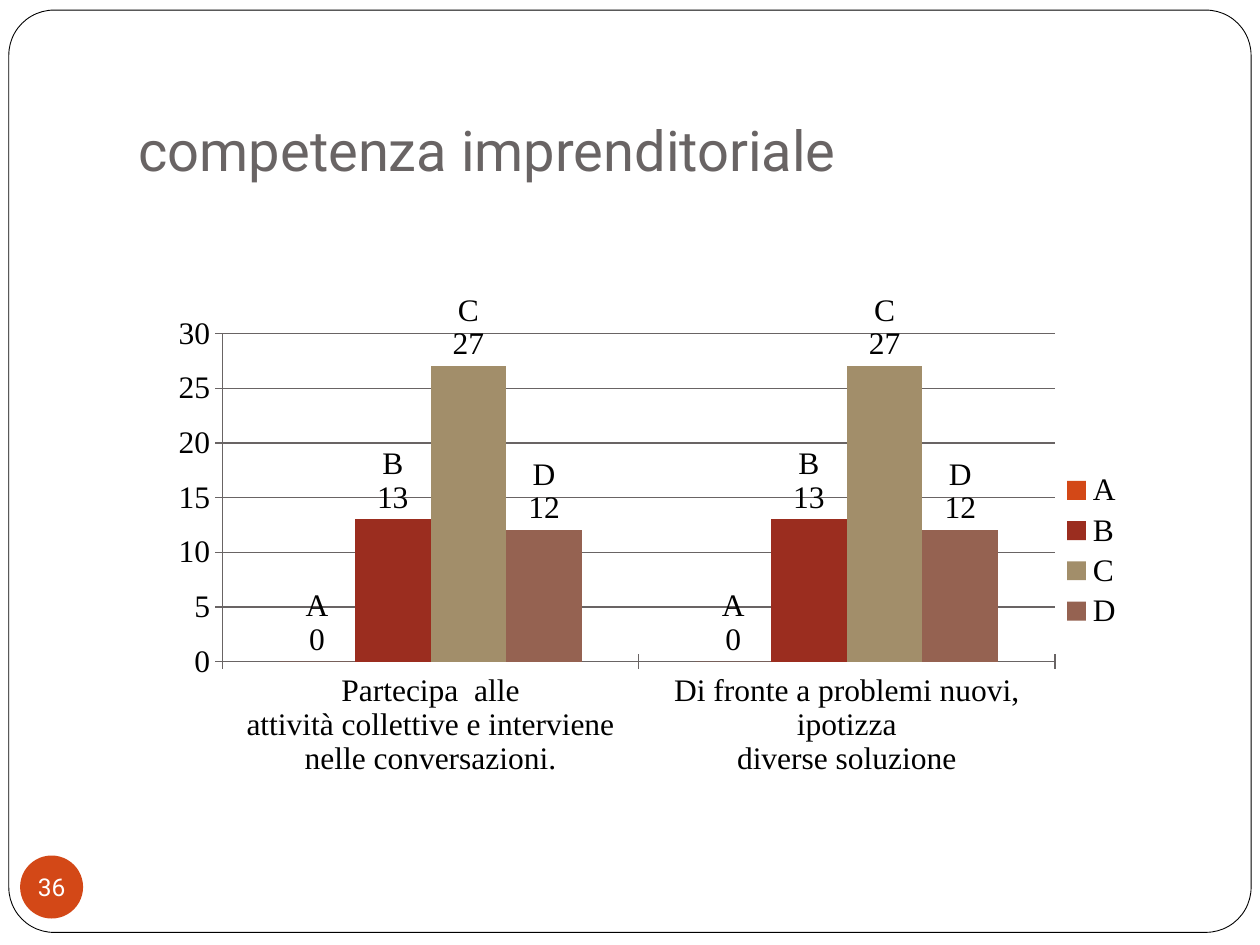
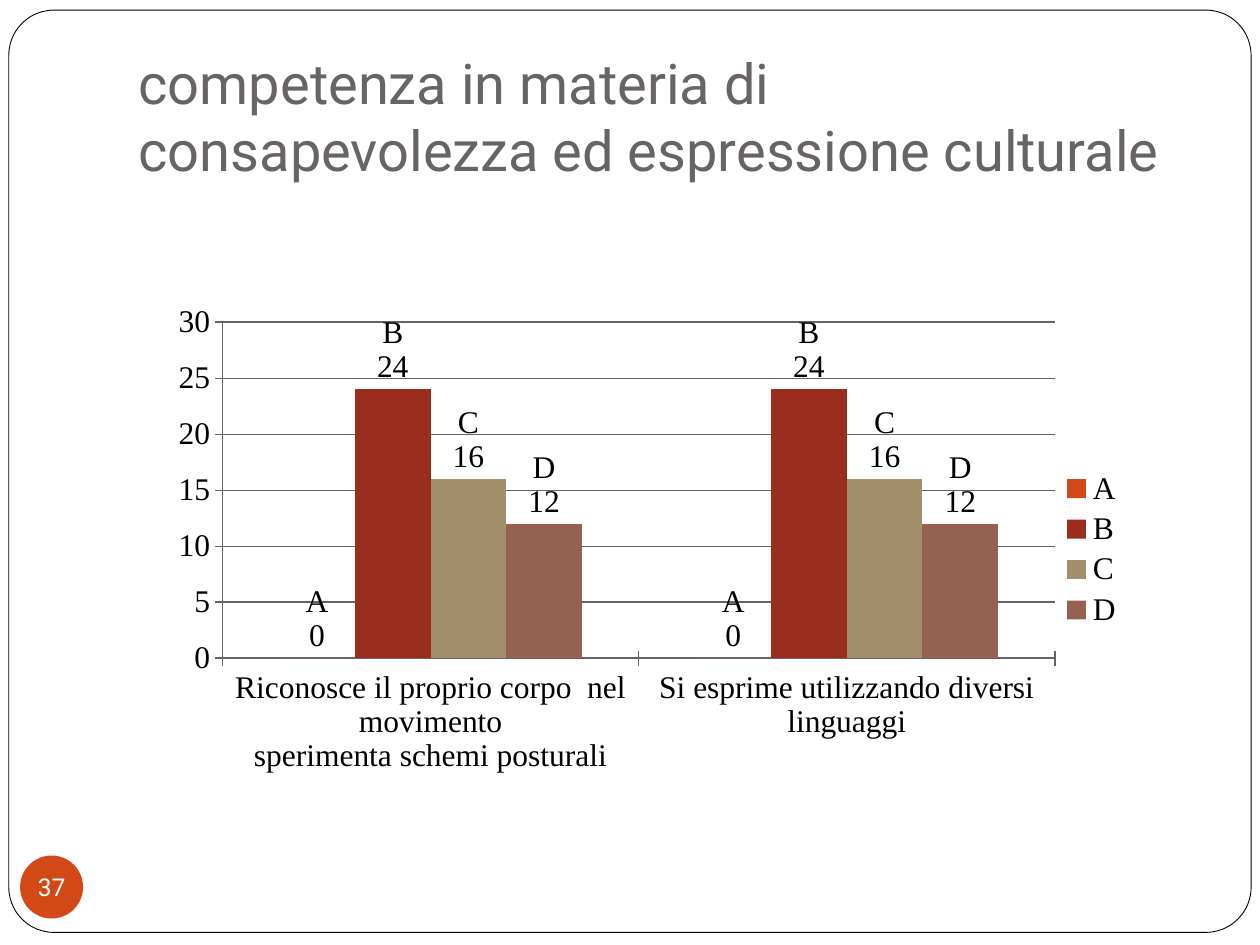
import pptx
import pptx.chart.data
import pptx.dml.color
import pptx.enum.chart
import pptx.enum.shapes
import pptx.enum.text
import pptx.util
import lxml.etree
from pptx.dml.color import RGBColor
from pptx.util import Inches, Pt

WHITE = RGBColor(0xFF, 0xFF, 0xFF)
BLACK = RGBColor(0x00, 0x00, 0x00)
GRAY = RGBColor(0x69, 0x64, 0x64)
ORANGE = RGBColor(0xD3, 0x48, 0x17)
LEVEL_COLORS = {
    "A": ORANGE,
    "B": RGBColor(0x9B, 0x2D, 0x1F),
    "C": RGBColor(0xA2, 0x8E, 0x6A),
    "D": RGBColor(0x95, 0x62, 0x51),
}
TITLE_FONT = "Roboto"
CHART_FONT = "Times New Roman"

FIRST_NUMBER = 36
competences = [
    {
        "title": "competenza imprenditoriale",
        "criteria": [
            "Partecipa  alle\nattività collettive e interviene nelle conversazioni.",
            "Di fronte a problemi nuovi, ipotizza\ndiverse soluzione",
        ],
        "pupils": {"A": [0, 0], "B": [13, 13], "C": [27, 27], "D": [12, 12]},
        "plot": {"x": 0.07, "y": 0.073, "w": 0.847, "h": 0.645},
    },
    {
        "title": "competenza in materia di consapevolezza ed espressione culturale",
        "criteria": [
            "Riconosce il proprio corpo  nel movimento\nsperimenta schemi posturali",
            "Si esprime utilizzando diversi linguaggi",
        ],
        "pupils": {"A": [0, 0], "B": [24, 24], "C": [16, 16], "D": [12, 12]},
        "plot": {"x": 0.07, "y": 0.056, "w": 0.847, "h": 0.657},
    },
]


def add_chart_tag(parent, tag, value):
    child = lxml.etree.SubElement(parent, pptx.oxml.ns.qn("c:" + tag))
    child.set("val", str(value))


def style_text(paragraph, size, color):
    font = paragraph.runs[0].font
    font.name = TITLE_FONT
    font.size = Pt(size)
    font.color.rgb = color


deck = pptx.Presentation()
deck.slide_width = Inches(10)
deck.slide_height = Inches(7.5)

for number, competence in enumerate(competences, FIRST_NUMBER):
    slide = deck.slides.add_slide(deck.slide_layouts[5])

    frame = slide.shapes.add_shape(
        pptx.enum.shapes.MSO_SHAPE.ROUNDED_RECTANGLE,
        Inches(0.07), Inches(0.08), Inches(9.86), Inches(7.32))
    frame.adjustments[0] = 0.049
    frame.shadow.inherit = False
    frame.fill.solid()
    frame.fill.fore_color.rgb = WHITE
    frame.line.color.rgb = BLACK
    frame.line.width = Pt(0.5)
    slide.shapes._spTree.insert(2, frame._element)

    title = slide.shapes.title
    title.left, title.top = Inches(1), Inches(0.3)
    title.width, title.height = Inches(8.5), Inches(1.25)
    heading = title.text_frame
    heading.text = competence["title"]
    heading.word_wrap = True
    heading.auto_size = pptx.enum.text.MSO_AUTO_SIZE.NONE
    heading.vertical_anchor = pptx.enum.text.MSO_ANCHOR.BOTTOM
    heading.margin_left = heading.margin_right = heading.margin_bottom = Inches(0.1)
    heading.margin_top = Inches(0.05)
    heading.paragraphs[0].alignment = pptx.enum.text.PP_ALIGN.LEFT
    style_text(heading.paragraphs[0], 32, GRAY)

    badge = slide.shapes.add_shape(
        pptx.enum.shapes.MSO_SHAPE.OVAL,
        Inches(0.16), Inches(6.79), Inches(0.5), Inches(0.5))
    badge.shadow.inherit = False
    badge.fill.solid()
    badge.fill.fore_color.rgb = ORANGE
    badge.line.fill.background()
    page = badge.text_frame
    page.text = str(number)
    page.word_wrap = False
    page.vertical_anchor = pptx.enum.text.MSO_ANCHOR.MIDDLE
    page.margin_left = page.margin_right = page.margin_top = page.margin_bottom = 0
    page.paragraphs[0].alignment = pptx.enum.text.PP_ALIGN.CENTER
    style_text(page.paragraphs[0], 14, WHITE)

    results = pptx.chart.data.CategoryChartData(number_format="0")
    results.categories = competence["criteria"]
    for level, counts in competence["pupils"].items():
        results.add_series(level, counts)
    chart = slide.shapes.add_chart(
        pptx.enum.chart.XL_CHART_TYPE.COLUMN_CLUSTERED,
        Inches(1.22), Inches(2.33), Inches(7.8), Inches(4.06), results).chart
    chart.has_title = False
    chart.font.name = CHART_FONT
    chart.font.size = Pt(18)
    chart.font.color.rgb = BLACK
    chart.has_legend = True
    chart.legend.position = pptx.enum.chart.XL_LEGEND_POSITION.RIGHT
    chart.legend.include_in_layout = False

    criteria_axis, count_axis = chart.category_axis, chart.value_axis
    for axis in (criteria_axis, count_axis):
        axis.major_tick_mark = pptx.enum.chart.XL_TICK_MARK.CROSS
        axis.minor_tick_mark = pptx.enum.chart.XL_TICK_MARK.NONE
        axis.format.line.color.rgb = GRAY
    count_axis.minimum_scale = 0
    count_axis.maximum_scale = 30
    count_axis.major_unit = 5
    count_axis.has_major_gridlines = True
    count_axis.major_gridlines.format.line.color.rgb = GRAY

    bars = chart.plots[0]
    bars.vary_by_categories = False
    bars.gap_width = 150
    bars.overlap = 0
    for level in bars.series:
        level.format.fill.solid()
        level.format.fill.fore_color.rgb = LEVEL_COLORS[level.name]
        labels = level.data_labels
        labels.show_value = True
        labels.show_series_name = True
        labels.position = pptx.enum.chart.XL_LABEL_POSITION.OUTSIDE_END
        separator = lxml.etree.Element(pptx.oxml.ns.qn("c:separator"))
        separator.text = "\n"
        labels._element.find(pptx.oxml.ns.qn("c:showBubbleSize")).addnext(separator)

    plot_area = chart._chartSpace.chart.plotArea
    for old_layout in plot_area.findall(pptx.oxml.ns.qn("c:layout")):
        plot_area.remove(old_layout)
    layout = lxml.etree.Element(pptx.oxml.ns.qn("c:layout"))
    plot_area.insert(0, layout)
    manual = lxml.etree.SubElement(layout, pptx.oxml.ns.qn("c:manualLayout"))
    add_chart_tag(manual, "layoutTarget", "inner")
    for side in "xy":
        add_chart_tag(manual, side + "Mode", "edge")
    for side, share in competence["plot"].items():
        add_chart_tag(manual, side, share)

deck.save("out.pptx")
